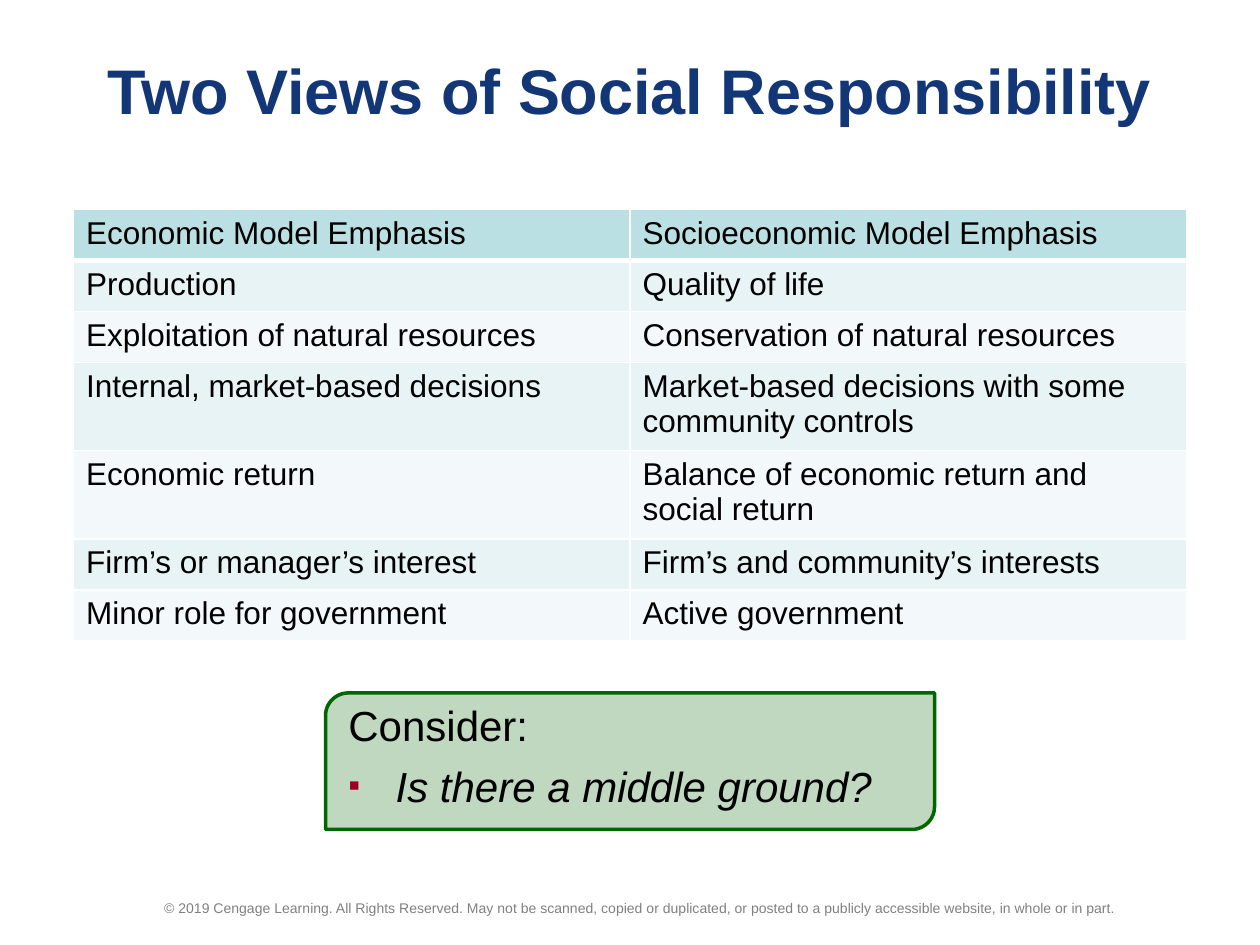
from pptx import Presentation
from pptx.dml.color import RGBColor
from pptx.enum.shapes import MSO_SHAPE
from pptx.enum.text import MSO_ANCHOR, PP_ALIGN
from pptx.oxml import parse_xml
from pptx.oxml.ns import nsdecls, qn
from pptx.util import Pt

NAVY = RGBColor(0x13, 0x36, 0x76)
BLACK = RGBColor(0x00, 0x00, 0x00)
GRAY = RGBColor(0x80, 0x80, 0x80)
WHITE = RGBColor(0xFF, 0xFF, 0xFF)
GREEN = RGBColor(0x00, 0x66, 0x00)
CRIMSON = RGBColor(0x9E, 0x00, 0x25)
HEADER_FILL = RGBColor(0xBB, 0xE0, 0xE3)
BAND_FILLS = (RGBColor(0xF3, 0xF9, 0xFA), RGBColor(0xE7, 0xF3, 0xF4))

VIEWS = [
    ("Economic Model Emphasis", "Socioeconomic Model Emphasis"),
    ("Production", "Quality of life"),
    ("Exploitation of natural resources", "Conservation of natural resources"),
    ("Internal, market-based decisions",
     "Market-based decisions with some community controls"),
    ("Economic return", "Balance of economic return and social return"),
    ("Firm’s or manager’s interest", "Firm’s and community’s interests"),
    ("Minor role for government", "Active government"),
]
COPYRIGHT = (
    "© 2019 Cengage Learning. All Rights Reserved. May not be scanned, copied or "
    "duplicated, or posted to a publicly accessible website, in whole or in part."
)


class SlideBuilder:
    font_name = "Arial"

    def __init__(self, deck):
        self.page = deck.slides.add_slide(deck.slide_layouts[6])

    def style(self, para, size, color=BLACK, bold=False, italic=False):
        for span in para.runs:
            font = span.font
            font.name = self.font_name
            font.size = Pt(size)
            font.color.rgb = color
            font.bold = bold
            font.italic = italic

    def text(self, area, lines, size, color=BLACK, bold=False,
             align=PP_ALIGN.LEFT, anchor=MSO_ANCHOR.TOP):
        box = self.page.shapes.add_textbox(*map(Pt, area))
        frame = box.text_frame
        frame.word_wrap = True
        frame.vertical_anchor = anchor
        frame.text = "\n".join(lines)
        for para in frame.paragraphs:
            para.alignment = align
            self.style(para, size, color, bold)
        return frame

    def bullet(self, para, size, color):
        properties = para._p.get_or_add_pPr()
        properties.set("marL", str(Pt(27)))
        properties.set("indent", str(-Pt(27)))
        for xml in (
            f'<a:buClr {nsdecls("a")}><a:srgbClr val="{color}"/></a:buClr>',
            f'<a:buSzPct {nsdecls("a")} val="80000"/>',
            f'<a:buFont {nsdecls("a")} typeface="{self.font_name}"/>',
            f'<a:buChar {nsdecls("a")} char="▪"/>',
        ):
            properties.append(parse_xml(xml))
        para.space_before = Pt(6)
        self.style(para, size, italic=True)

    def panel(self, area, color, opacity, line_width):
        shape = self.page.shapes.add_shape(
            MSO_SHAPE.ROUND_2_DIAG_RECTANGLE, *map(Pt, area))
        shape.shadow.inherit = False
        shape.fill.solid()
        shape.fill.fore_color.rgb = color
        fill_color = shape._element.spPr.find(qn("a:solidFill"))[0]
        fill_color.append(
            parse_xml(f'<a:alpha {nsdecls("a")} val="{opacity * 1000}"/>'))
        shape.line.color.rgb = color
        shape.line.width = Pt(line_width)

    def borders(self, cell, color, bottom):
        properties = cell._tc.get_or_add_tcPr()
        for side, width in (("L", 1), ("R", 1), ("T", 1), ("B", bottom)):
            properties.append(parse_xml(
                f'<a:ln{side} {nsdecls("a")} w="{Pt(width)}"><a:solidFill>'
                f'<a:srgbClr val="{color}"/></a:solidFill></a:ln{side}>'))

    def table(self, left, top, column_width, row_height, rows, size):
        columns = len(rows[0])
        table = self.page.shapes.add_table(
            len(rows), columns, Pt(left), Pt(top),
            Pt(column_width * columns), Pt(row_height * len(rows))).table
        for row_index, row in enumerate(rows):
            is_header = row_index == 0
            for column_index, words in enumerate(row):
                cell = table.cell(row_index, column_index)
                cell.text_frame.text = words
                self.style(cell.text_frame.paragraphs[0], size)
                self.borders(cell, WHITE, 3 if is_header else 1)
                cell.fill.solid()
                cell.fill.fore_color.rgb = (
                    HEADER_FILL if is_header else BAND_FILLS[row_index % 2])


def main():
    deck = Presentation()
    deck.slide_width = Pt(720)
    deck.slide_height = Pt(540)
    builder = SlideBuilder(deck)
    builder.text((54, 510, 624, 18), [COPYRIGHT], 8, GRAY,
                 align=PP_ALIGN.CENTER, anchor=MSO_ANCHOR.MIDDLE)
    builder.text((36, 12, 648, 78), ["Two Views of Social Responsibility"], 36, NAVY,
                 bold=True, align=PP_ALIGN.CENTER, anchor=MSO_ANCHOR.MIDDLE)
    builder.table(42, 119.5, 318, 29.2, VIEWS, 18)
    builder.panel((186, 396, 348, 78), GREEN, 25, 2)
    question = builder.text((192, 396, 336, 84),
                            ["Consider:", "Is there a middle ground?"], 24)
    builder.bullet(question.paragraphs[1], 24, CRIMSON)
    deck.save("out.pptx")


if __name__ == "__main__":
    main()
